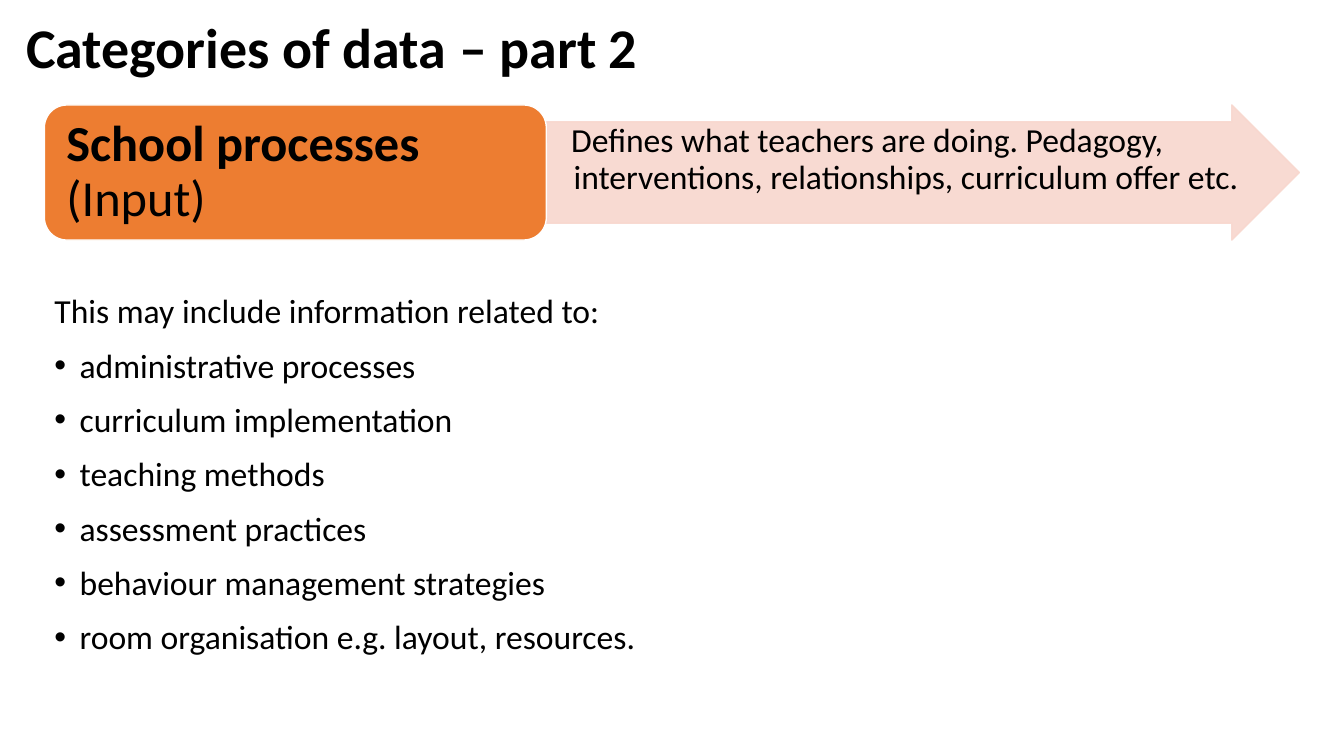
import pptx
import pptx.dml.color
import pptx.enum.shapes
import pptx.enum.text
import pptx.util
import lxml.etree

Pt = pptx.util.Pt
RGB = pptx.dml.color.RGBColor
Shape = pptx.enum.shapes.MSO_SHAPE
Anchor = pptx.enum.text.MSO_ANCHOR
Align = pptx.enum.text.PP_ALIGN
Fit = pptx.enum.text.MSO_AUTO_SIZE
qn = pptx.oxml.ns.qn

BLACK = RGB(0x00, 0x00, 0x00)
WHITE = RGB(0xFF, 0xFF, 0xFF)
ORANGE = RGB(0xED, 0x7D, 0x31)
PINK = RGB(0xF8, 0xD7, 0xCE)

TOPICS = [
    "administrative processes",
    "curriculum implementation",
    "teaching methods",
    "assessment practices",
    "behaviour management strategies",
    "room organisation e.g. layout, resources.",
]


def place(shape, box):
    shape.left, shape.top, shape.width, shape.height = map(Pt, box)


def style(para, size, spacing, bold=None):
    para.alignment = Align.LEFT
    para.line_spacing = spacing
    para.font.name = "Calibri"
    para.font.size = Pt(size)
    para.font.color.rgb = BLACK
    para.font.bold = bold


def indent(para, left, first, bullet=None):
    props = para._p.get_or_add_pPr()
    props.set("marL", str(Pt(left)))
    props.set("indent", str(Pt(first)))
    if bullet:
        font = lxml.etree.SubElement(props, qn("a:buFont"))
        font.set("typeface", "Arial")
        mark = lxml.etree.SubElement(props, qn("a:buChar"))
        mark.set("char", bullet)
    else:
        lxml.etree.SubElement(props, qn("a:buNone"))


def frame(shape, anchor, across, down):
    text = shape.text_frame
    text.word_wrap = True
    text.auto_size = Fit.NONE
    text.vertical_anchor = anchor
    text.margin_left = text.margin_right = Pt(across)
    text.margin_top = text.margin_bottom = Pt(down)
    return text


def block(slide, kind, box, fill, line):
    shape = slide.shapes.add_shape(kind, *map(Pt, box))
    shape.shadow.inherit = False
    shape.fill.solid()
    shape.fill.fore_color.rgb = fill
    shape.line.color.rgb = line
    shape.line.width = Pt(1)
    return shape


def fade(shape, share):
    for color in shape._element.spPr.iter(qn("a:srgbClr")):
        alpha = lxml.etree.SubElement(color, qn("a:alpha"))
        alpha.set("val", str(share * 1000))


def heading(slide, box):
    title = slide.shapes.title
    place(title, box)
    text = frame(title, Anchor.MIDDLE, 7.2, 3.6)
    text.text = "Categories of data – part 2"
    style(text.paragraphs[0], 40, 0.9, True)


def banner(slide, box):
    left, top, width, height = box
    split = width * 0.4
    start = left + split
    arrow = block(slide, Shape.RIGHT_ARROW,
                  (start, top, width - split, height), PINK, PINK)
    arrow.adjustments[0] = 0.75
    fade(arrow, 90)
    edge = height / 8
    note = slide.shapes.add_textbox(
        *map(Pt, (start, top + edge, width - split - 36, height - 2 * edge)))
    text = frame(note, Anchor.TOP, 1.44, 1.44)
    text.text = ("Defines what teachers are doing. Pedagogy, "
                 "interventions, relationships, curriculum offer etc.")
    style(text.paragraphs[0], 24, 0.9)
    indent(text.paragraphs[0], 18, -1.7)

    label = block(slide, Shape.ROUNDED_RECTANGLE,
                  (left, top, split, height), ORANGE, WHITE)
    text = frame(label, Anchor.MIDDLE, 11, 5)
    para = text.paragraphs[0]
    style(para, 36, 0.9)
    para.add_run().text = "School processes "
    para.runs[0].font.bold = True
    para.add_run().text = "(Input)"


def details(slide, box):
    body = slide.placeholders[1]
    place(body, box)
    text = frame(body, Anchor.TOP, 7.2, 3.6)
    text.text = "\n".join(["This may include information related to:"] + TOPICS)
    for row, para in enumerate(text.paragraphs):
        style(para, 24, 1.0)
        para.space_before = Pt(10)
        if row:
            indent(para, 18, -18, "•")
        else:
            indent(para, 0, 0)


def main():
    deck = pptx.Presentation()
    deck.slide_width, deck.slide_height = Pt(960), Pt(540)
    slide = deck.slides.add_slide(deck.slide_layouts[1])
    heading(slide, (11.5, 8, 482.4, 56))
    banner(slide, (31.7, 75, 896.4, 96.5))
    details(slide, (31.7, 203.8, 724.3, 312.5))
    deck.save("out.pptx")


if __name__ == "__main__":
    main()
